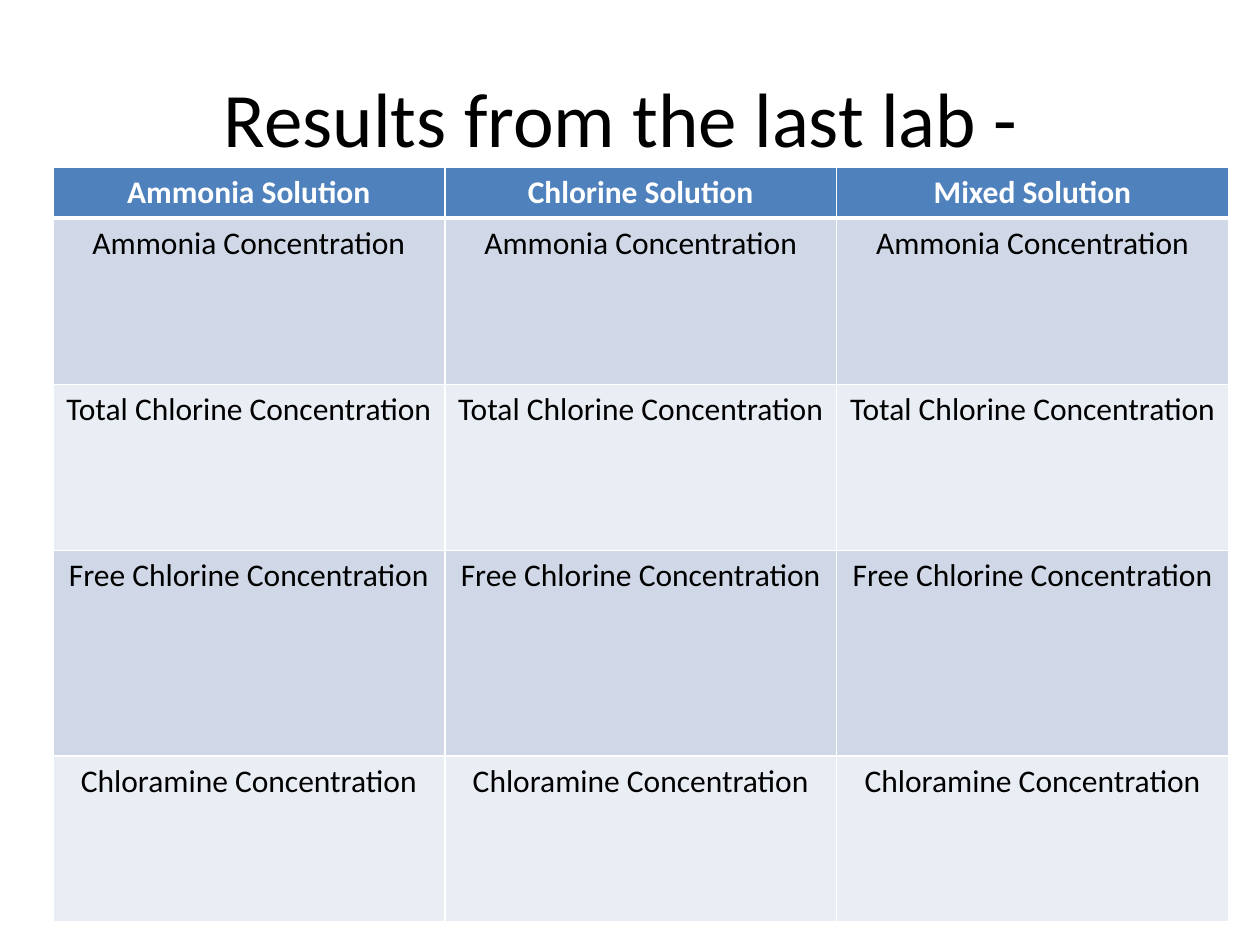
from dataclasses import dataclass

from lxml import etree
from pptx import Presentation
from pptx.dml.color import RGBColor
from pptx.enum import text
from pptx.oxml import ns
from pptx.util import Inches, Pt


@dataclass(frozen=True)
class Theme:
    font: str = "Calibri"
    title_size: int = 44
    table_size: int = 18
    ink: str = "000000"
    header_ink: str = "FFFFFF"
    header_fill: str = "4F81BD"
    bands: tuple = ("D0D8E8", "E9EDF4")
    rule: str = "FFFFFF"
    thin: int = 1
    thick: int = 3


THEME = Theme()
SOLUTIONS = ["Ammonia Solution", "Chlorine Solution", "Mixed Solution"]
MEASURES = [
    ("Ammonia Concentration", 1.32),
    ("Total Chlorine Concentration", 1.32),
    ("Free Chlorine Concentration", 1.63),
    ("Chloramine Concentration", 1.32),
]
HEADER_HEIGHT = 0.4
COLUMN_WIDTH = 3.11


def write(frame, words, size, color, bold=False):
    para = frame.paragraphs[0]
    para.alignment = text.PP_ALIGN.CENTER
    span = para.add_run()
    span.text = words
    span.font.name = THEME.font
    span.font.size = Pt(size)
    span.font.bold = bold
    span.font.color.rgb = RGBColor.from_string(color)


def add_title(page, words):
    box = page.shapes.add_textbox(Inches(0.5), Inches(0.3), Inches(9), Inches(1.25))
    box.text_frame.word_wrap = True
    box.text_frame.vertical_anchor = text.MSO_ANCHOR.MIDDLE
    write(box.text_frame, words, THEME.title_size, THEME.ink)


def set_borders(cell, top, bottom):
    """Draw the cell's four edges; they must come before its fill in the XML."""
    properties = cell._tc.get_or_add_tcPr()
    widths = {"lnL": THEME.thin, "lnR": THEME.thin, "lnT": top, "lnB": bottom}
    for edge, width in widths.items():
        line = etree.SubElement(properties, ns.qn(f"a:{edge}"), w=str(Pt(width)))
        fill = etree.SubElement(line, ns.qn("a:solidFill"))
        etree.SubElement(fill, ns.qn("a:srgbClr"), val=THEME.rule)


def fill_row(table, row, labels, height, fill, color, bold=False):
    table.rows[row].height = Inches(height)
    top = THEME.thick if row == 1 else THEME.thin
    bottom = THEME.thick if row == 0 else THEME.thin
    for column, label in enumerate(labels):
        cell = table.cell(row, column)
        set_borders(cell, top, bottom)
        cell.fill.solid()
        cell.fill.fore_color.rgb = RGBColor.from_string(fill)
        write(cell.text_frame, label, THEME.table_size, color, bold)


def add_results_table(page):
    count = len(SOLUTIONS)
    height = HEADER_HEIGHT + sum(size for _, size in MEASURES)
    table = page.shapes.add_table(
        len(MEASURES) + 1, count,
        Inches(0.42), Inches(1.33), Inches(COLUMN_WIDTH * count), Inches(height),
    ).table
    for column in table.columns:
        column.width = Inches(COLUMN_WIDTH)
    fill_row(table, 0, SOLUTIONS, HEADER_HEIGHT,
             THEME.header_fill, THEME.header_ink, bold=True)
    for row, (measure, size) in enumerate(MEASURES, start=1):
        fill_row(table, row, [measure] * count, size,
                 THEME.bands[(row - 1) % 2], THEME.ink)


def main():
    deck = Presentation()
    deck.slide_width, deck.slide_height = Inches(10), Inches(7.5)
    page = deck.slides.add_slide(deck.slide_layouts[6])
    add_title(page, "Results from the last lab - ")
    add_results_table(page)
    deck.save("out.pptx")


if __name__ == "__main__":
    main()
